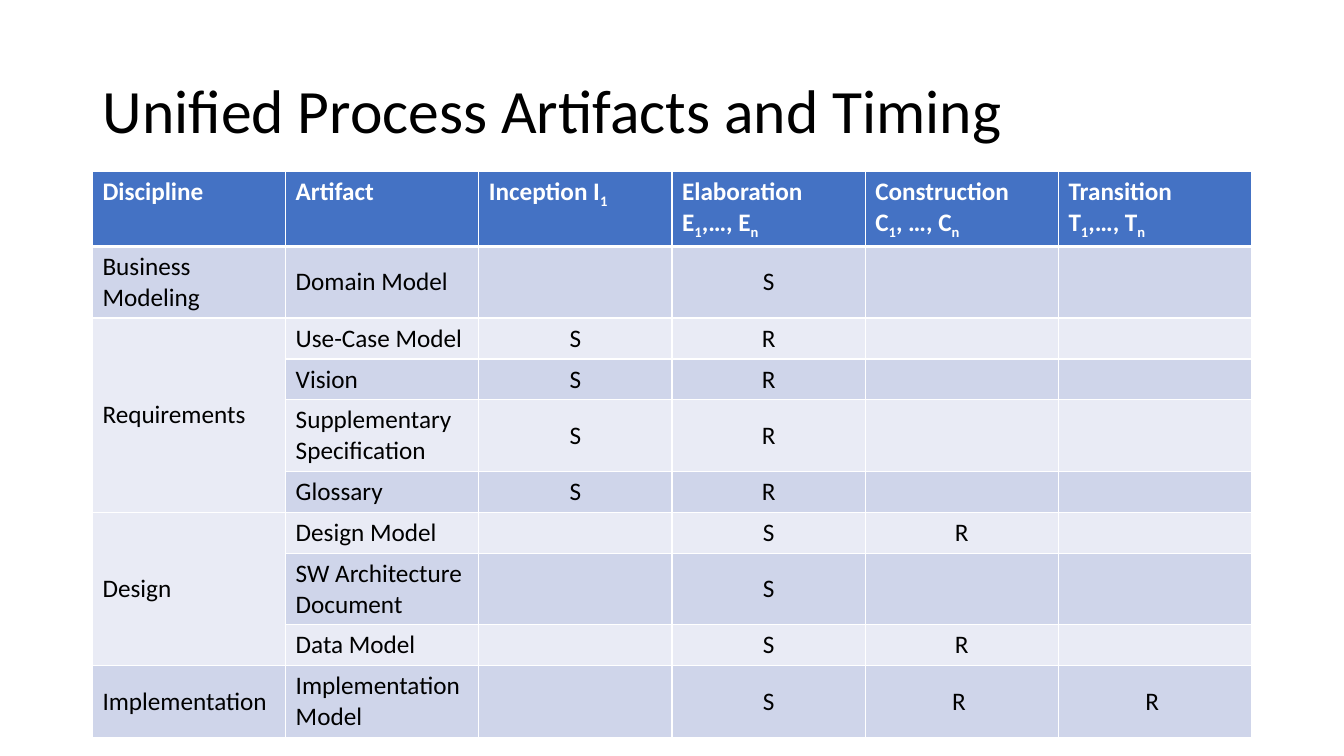
from dataclasses import dataclass

from lxml import etree
from pptx import Presentation
from pptx import util as u
from pptx.dml.color import RGBColor
from pptx.enum import text
from pptx.oxml import ns

FONT = "Calibri"
COLOURS = {
    "ink": "000000",
    "paper": "FFFFFF",
    "header": "4472C4",
    "odd": "CFD5EA",
    "even": "E9EBF5",
}
WIDTH, HEIGHT = u.Inches(13.333), u.Inches(7.5)

# An underscore lowers the single character after it
HEADINGS = (
    "Discipline",
    "Artifact",
    "Inception I_1",
    "Elaboration E_1,…, E_n",
    "Construction \nC_1, …, C_n",
    "Transition \nT_1,…, T_n",
)


@dataclass
class Artifact:
    name: str
    inception: str = ""
    elaboration: str = ""
    construction: str = ""
    transition: str = ""

    def marks(self) -> tuple[str, ...]:
        return self.inception, self.elaboration, self.construction, self.transition


@dataclass
class Discipline:
    name: str
    artifacts: tuple[Artifact, ...]


DISCIPLINES = (
    Discipline("Business Modeling", (Artifact("Domain Model", "", "S"),)),
    Discipline("Requirements", (
        Artifact("Use-Case Model", "S", "R"),
        Artifact("Vision", "S", "R"),
        Artifact("Supplementary Specification", "S", "R"),
        Artifact("Glossary", "S", "R"),
    )),
    Discipline("Design", (
        Artifact("Design Model", "", "S", "R"),
        Artifact("SW Architecture Document", "", "S"),
        Artifact("Data Model", "", "S", "R"),
    )),
    Discipline("Implementation", (
        Artifact("Implementation Model", "", "S", "R ", "R "),
    )),
)


def across(percent: float) -> int:
    return round(WIDTH * percent / 100)


def down(percent: float) -> int:
    return round(HEIGHT * percent / 100)


def colour(name: str) -> RGBColor:
    return RGBColor.from_string(COLOURS[name])


def style_font(font, size: float, ink: str, bold: bool = False) -> None:
    font.name, font.size, font.bold = FONT, u.Pt(size), bold
    font.color.rgb = colour(ink)


def add_words(para, words: str) -> None:
    for number, line in enumerate(words.split("\n")):
        if number:
            para.add_line_break()
        first, *lowered = line.split("_")
        para.add_run().text = first
        for piece in lowered:
            span = para.add_run()
            span.text = piece[0]
            span._r.get_or_add_rPr().set("baseline", "-25000")
            if piece[1:]:
                para.add_run().text = piece[1:]


def set_borders(cell, top: float, bottom: float) -> None:
    properties = cell._tc.get_or_add_tcPr()
    sides = {"lnL": 1, "lnR": 1, "lnT": top, "lnB": bottom}
    for place, (side, points) in enumerate(sides.items()):
        line = etree.Element(ns.qn(f"a:{side}"), w=str(u.Pt(points)))
        fill = etree.SubElement(line, ns.qn("a:solidFill"))
        etree.SubElement(fill, ns.qn("a:srgbClr"), val=COLOURS["paper"])
        properties.insert(place, line)


def fill_cell(cell, words: str, row: int, centred: bool = False) -> None:
    header = row == 0
    cell.fill.solid()
    cell.fill.fore_color.rgb = colour("header" if header else "odd" if row % 2 else "even")
    set_borders(cell, top=3 if row == 1 else 1, bottom=3 if header else 1)
    cell.vertical_anchor = text.MSO_ANCHOR.TOP if header else text.MSO_ANCHOR.MIDDLE
    para = cell.text_frame.paragraphs[0]
    para.alignment = text.PP_ALIGN.CENTER if centred else text.PP_ALIGN.LEFT
    style_font(para.font, 18, "paper" if header else "ink", header)
    if words:
        add_words(para, words)


def add_title(page) -> None:
    title = page.shapes.title
    title.left, title.top = across(6.88), down(5.33)
    title.width, title.height = across(86.25), down(19.33)
    title.text_frame.text = "Unified Process Artifacts and Timing"
    title.text_frame.vertical_anchor = text.MSO_ANCHOR.MIDDLE
    para = title.text_frame.paragraphs[0]
    para.alignment = text.PP_ALIGN.LEFT
    para.line_spacing = 0.9
    style_font(para.font, 44, "ink")


def add_timing_table(page) -> None:
    row_count = 1 + sum(len(discipline.artifacts) for discipline in DISCIPLINES)
    table = page.shapes.add_table(
        row_count, len(HEADINGS),
        across(6.88), down(22.67), across(86.25), down(5.41) * row_count,
    ).table

    # Header row
    for column, heading in enumerate(HEADINGS):
        fill_cell(table.cell(0, column), heading, 0)

    # One row per artifact, one merged cell per discipline
    row = 1
    for discipline in DISCIPLINES:
        first = row
        for artifact in discipline.artifacts:
            fill_cell(table.cell(row, 0), discipline.name if row == first else "", row)
            fill_cell(table.cell(row, 1), artifact.name, row)
            for column, mark in enumerate(artifact.marks(), start=2):
                fill_cell(table.cell(row, column), mark, row, centred=True)
            row += 1
        if row - first > 1:
            table.cell(first, 0).merge(table.cell(row - 1, 0))


def main() -> None:
    deck = Presentation()
    deck.slide_width, deck.slide_height = WIDTH, HEIGHT
    page = deck.slides.add_slide(deck.slide_layouts.get_by_name("Title Only"))
    add_title(page)
    add_timing_table(page)
    deck.save("out.pptx")


if __name__ == "__main__":
    main()
